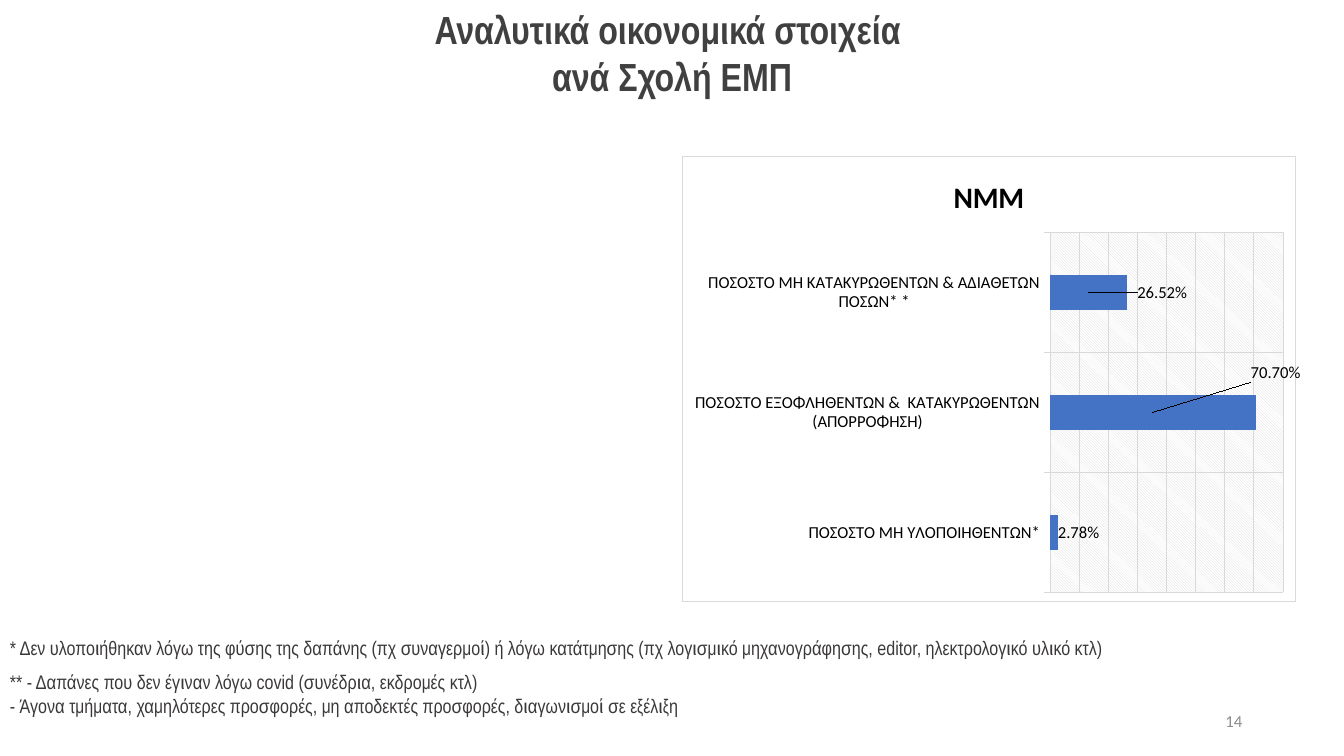
"""Build the slide of spending figures per school: title, bar chart and footnotes."""
from pptx import Presentation
from pptx.chart.data import CategoryChartData
from pptx.dml.color import RGBColor
from pptx.enum.chart import XL_CHART_TYPE as CT, XL_LABEL_POSITION as LP, XL_TICK_MARK as TM
from pptx.enum.text import MSO_ANCHOR as VA, PP_ALIGN as AL
from pptx.oxml import parse_xml
from pptx.oxml.ns import nsdecls, qn
from pptx.util import Inches, Pt

W, H = 13.33, 7.5
NARROW, SANS, GRID = "Arial Narrow", "Calibri", "D9D9D9"


def style(font, name, size, color, bold=False):
    font.name, font.size, font.bold = name, Pt(size), bold
    font.color.rgb = RGBColor.from_string(color)


def write(sp, box, lines, name, size, color, align=AL.LEFT, bold=False, anchor=VA.TOP):
    sp.left, sp.top, sp.width, sp.height = map(Inches, box)
    tf = sp.text_frame
    tf.word_wrap, tf.vertical_anchor = True, anchor
    for i, line in enumerate(lines):
        p = tf.add_paragraph() if i else tf.paragraphs[0]
        p.alignment = align
        for j, part in enumerate(line.split("\n")):
            if j:
                p.add_line_break()
            r = p.add_run()
            r.text = part
            style(r.font, name, size, color, bold)


prs = Presentation()
prs.slide_width, prs.slide_height = Inches(W), Inches(H)
s = prs.slides.add_slide(prs.slide_layouts[5])

write(s.shapes.title, (0, 0, W, 1.02), ["Αναλυτικά οικονομικά στοιχεία ", "ανά Σχολή ΕΜΠ"],
      NARROW, 28, "404040", AL.CENTER, True)

data = CategoryChartData(number_format="0.00%")
data.categories = ["ΠΟΣΟΣΤΟ ΜΗ ΥΛΟΠΟΙΗΘΕΝΤΩΝ*",
                   "ΠΟΣΟΣΤΟ ΕΞΟΦΛΗΘΕΝΤΩΝ &  ΚΑΤΑΚΥΡΩΘΕΝΤΩΝ (ΑΠΟΡΡΟΦΗΣΗ)",
                   "ΠΟΣΟΣΤΟ ΜΗ ΚΑΤΑΚΥΡΩΘΕΝΤΩΝ & ΑΔΙΑΘΕΤΩΝ ΠΟΣΩΝ* *"]
data.add_series("ΝΜΜ", [0.0278, 0.707, 0.2652])
chart = s.shapes.add_chart(CT.BAR_CLUSTERED, Inches(6.76), Inches(1.55),
                           Inches(6.14), Inches(4.42), data).chart
style(chart.font, SANS, 10, "000000")
chart.has_legend = False
chart.has_title = True
r = chart.chart_title.text_frame.paragraphs[0].add_run()
r.text = "ΝΜΜ"
style(r.font, SANS, 21.3, "000000", True)

cat, val = chart.category_axis, chart.value_axis
cat.has_major_gridlines = True
cat.major_tick_mark = TM.OUTSIDE
style(cat.tick_labels.font, SANS, 12, "000000")
val.minimum_scale, val.maximum_scale, val.major_unit = 0, 0.8, 0.1
val.visible = False
for line in (cat.format.line, cat.major_gridlines.format.line, val.major_gridlines.format.line):
    line.width = Pt(0.75)
    line.color.rgb = RGBColor.from_string(GRID)

plot = chart.plots[0]
plot.gap_width = 247
plot.vary_by_categories = False
bars = plot.series[0]
bars.format.fill.solid()
bars.format.fill.fore_color.rgb = RGBColor.from_string("4472C4")
labels = bars.data_labels
labels.show_value, labels.position = True, LP.CENTER
labels.number_format, labels.number_format_is_linked = "0.00%", False
style(labels.font, SANS, 12, "000000")

for i, (dx, dy) in enumerate([(0.04, 0), (0.2, -0.09), (0.12, 0)]):
    label = bars.points[i].data_label
    style(label.font, SANS, 12, "000000")
    label.position = LP.CENTER
    idx = bars.data_labels._element.findall(qn("c:dLbl"))[i].find(qn("c:idx"))
    idx.addnext(parse_xml(
        f'<c:layout {nsdecls("c")}><c:manualLayout><c:x val="{dx}"/><c:y val="{dy}"/>'
        '</c:manualLayout></c:layout>'))

area = chart.element.find(".//" + qn("c:plotArea"))
for old in area.findall(qn("c:layout")):
    area.remove(old)
area.insert(0, parse_xml(
    f'<c:layout {nsdecls("c")}><c:manualLayout><c:layoutTarget val="inner"/>'
    '<c:xMode val="edge"/><c:yMode val="edge"/><c:x val="0.6"/><c:y val="0.17"/>'
    '<c:w val="0.38"/><c:h val="0.81"/></c:manualLayout></c:layout>'))
area.append(parse_xml(
    f'<c:spPr {nsdecls("c", "a")}><a:pattFill prst="ltDnDiag">'
    f'<a:fgClr><a:srgbClr val="{GRID}"/></a:fgClr><a:bgClr><a:srgbClr val="FFFFFF"/></a:bgClr>'
    '</a:pattFill><a:ln><a:noFill/></a:ln></c:spPr>'))
chart.element.find(qn("c:chart")).addnext(parse_xml(
    f'<c:spPr {nsdecls("c", "a")}><a:solidFill><a:srgbClr val="FFFFFF"/></a:solidFill>'
    f'<a:ln w="{Pt(0.75)}"><a:solidFill><a:srgbClr val="{GRID}"/></a:solidFill></a:ln></c:spPr>'))

notes = [
    (6.26, 0.34, "* Δεν υλοποιήθηκαν λόγω της φύσης της δαπάνης (πχ συναγερμοί) ή λόγω κατάτμησης "
                 "(πχ λογισμικό μηχανογράφησης, editor, ηλεκτρολογικό υλικό κτλ)"),
    (6.6, 0.57, "** - Δαπάνες που δεν έγιναν λόγω covid (συνέδρια, εκδρομές κτλ)\n"
                "- Άγονα τμήματα, χαμηλότερες προσφορές, μη αποδεκτές προσφορές, "
                "διαγωνισμοί σε εξέλιξη"),
]
for top, height, note in notes:
    write(s.shapes.add_textbox(0, 0, 0, 0), (0, top, W, height), [note], NARROW, 14, "3B3838")
write(s.shapes.add_textbox(0, 0, 0, 0), (9.42, 6.95, 3, 0.4), ["14"],
      SANS, 12, "8C8C8C", AL.RIGHT, anchor=VA.MIDDLE)

prs.save("out.pptx")
